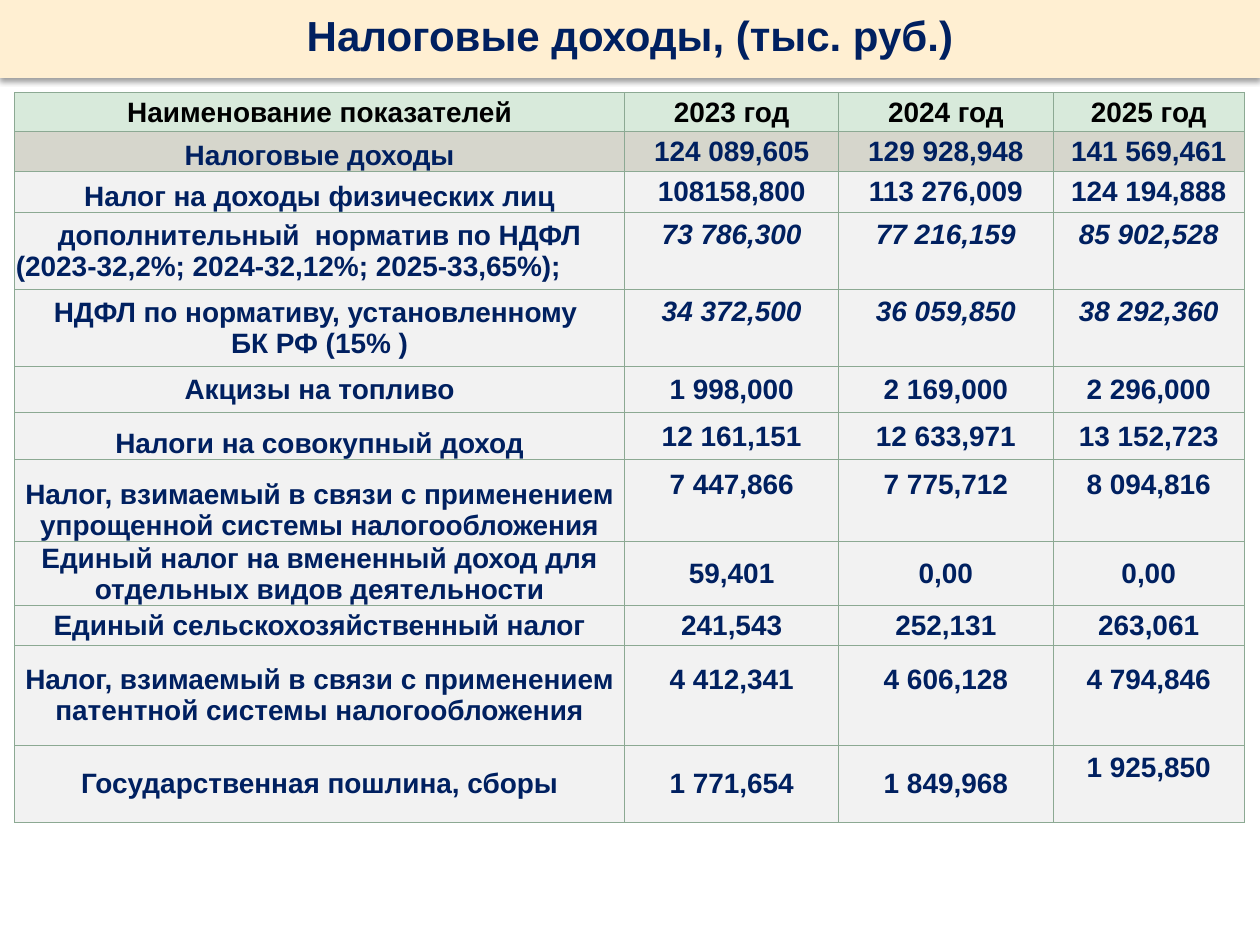
from pptx import Presentation
from pptx.dml.color import RGBColor as RGB
from pptx.enum.shapes import MSO_SHAPE as Shape
from pptx.enum.text import MSO_ANCHOR as Anchor, PP_ALIGN as Align
from pptx.oxml import parse_xml
from pptx.oxml.ns import nsdecls
from pptx.util import Pt

HUES = {"navy": "002060", "black": "000000", "cream": "FFEFD2", "mint": "D8EADB",
        "stone": "D6D6CC", "pale": "F2F2F2", "sage": "8CA993"}

COLS = [348.5, 122.4, 122.4, 109.4]
MID, LOW = Anchor.MIDDLE, Anchor.BOTTOM
LIFT = 18.4

ROWS = [
    (22.3, MID, ["Наименование показателей", "2023 год", "2024 год", "2025 год"]),
    (22.9, LOW, ["Налоговые доходы", "124 089,605", "129 928,948", "141 569,461"]),
    (23.2, LOW, ["Налог на доходы физических лиц", "108158,800", "113 276,009", "124 194,888"]),
    (44, MID, [" дополнительный  норматив по НДФЛ \n(2023-32,2%; 2024-32,12%; 2025-33,65%);",
               "73 786,300", "77 216,159", "85 902,528"]),
    (44, MID, ["НДФЛ по нормативу, установленному \nБК РФ (15% )",
               "34 372,500", "36 059,850", "38 292,360"]),
    (26.7, MID, ["Акцизы на топливо", "1 998,000", "2 169,000", "2 296,000"]),
    (26.7, LOW, ["Налоги на совокупный доход", "12 161,151", "12 633,971", "13 152,723"]),
    (46.8, LOW, ["Налог, взимаемый в связи с применением упрощенной системы налогообложения",
                 "7 447,866", "7 775,712", "8 094,816"]),
    (36.6, LOW, ["Единый налог на вмененный доход для отдельных видов деятельности",
                 "59,401", "0,00", "0,00"]),
    (22.9, MID, ["Единый сельскохозяйственный налог", "241,543", "252,131", "263,061"]),
    (57, MID, ["Налог, взимаемый в связи с применением патентной системы налогообложения",
               "4 412,341", "4 606,128", "4 794,846"]),
    (44, MID, ["Государственная пошлина, сборы", "1 771,654", "1 849,968", "1 925,850"]),
]
SLANTED = {3, 4}
RAISED = {(r, c) for r in (3, 4, 7, 10) for c in (1, 2, 3)} | {(11, 3)}
LEFT = {(3, 0, 1)}


class Deck:
    font = "Arial"

    def __init__(self, wide, high):
        self.prs = Presentation()
        self.prs.slide_width, self.prs.slide_height = Pt(wide), Pt(high)
        self.slide = self.prs.slides.add_slide(self.prs.slide_layouts[6])

    def style(self, para, size, hue, slant=False, align=Align.CENTER):
        para.alignment = align
        font = para.font
        font.name, font.size, font.bold, font.italic = self.font, Pt(size), True, slant
        font.color.rgb = RGB.from_string(HUES[hue])

    def paint(self, item, hue):
        item.fill.solid()
        item.fill.fore_color.rgb = RGB.from_string(HUES[hue])

    def banner(self, text, wide, high):
        box = self.slide.shapes.add_shape(Shape.RECTANGLE, 0, 0, Pt(wide), Pt(high))
        self.paint(box, "cream")
        box.line.fill.background()
        box.shadow.inherit = False
        glow = box._element.spPr.find("{*}effectLst")
        glow.append(parse_xml(
            f'<a:outerShdw {nsdecls("a")} blurRad="{Pt(3.1)}" dist="{Pt(2)}" dir="5400000" '
            f'rotWithShape="0"><a:srgbClr val="{HUES["black"]}"><a:alpha val="38000"/>'
            '</a:srgbClr></a:outerShdw>'))
        frame = box.text_frame
        frame.word_wrap = True
        frame.vertical_anchor = MID
        frame.margin_top, frame.margin_bottom = 0, Pt(5)
        frame.text = text
        self.style(frame.paragraphs[0], 24, "navy")

    def border(self, cell):
        props = cell._tc.get_or_add_tcPr()
        for side in "LRTB":
            props.append(parse_xml(
                f'<a:ln{side} {nsdecls("a")} w="{Pt(0.5)}"><a:solidFill>'
                f'<a:srgbClr val="{HUES["sage"]}"/></a:solidFill></a:ln{side}>'))

    def cell(self, cell, r, c, text, anchor):
        self.border(cell)
        self.paint(cell, {0: "mint", 1: "stone"}.get(r, "pale"))
        cell.margin_left = cell.margin_right = cell.margin_top = Pt(0.7)
        cell.margin_bottom = Pt(LIFT if (r, c) in RAISED else 0)
        cell.vertical_anchor = MID if c else anchor
        cell.text = text
        for n, para in enumerate(cell.text_frame.paragraphs):
            self.style(para, 16, "navy" if r else "black", c > 0 and r in SLANTED,
                       Align.LEFT if (r, c, n) in LEFT else Align.CENTER)

    def table(self, left, top):
        high = sum(row[0] for row in ROWS)
        grid = self.slide.shapes.add_table(
            len(ROWS), len(COLS), Pt(left), Pt(top), Pt(sum(COLS)), Pt(high)).table
        for col, wide in zip(grid.columns, COLS):
            col.width = Pt(wide)
        for r, (tall, anchor, texts) in enumerate(ROWS):
            grid.rows[r].height = Pt(tall)
            for c, text in enumerate(texts):
                self.cell(grid.cell(r, c), r, c, text, anchor)


def main():
    deck = Deck(720, 540)
    deck.table(8.4, 52.8)
    deck.banner("Налоговые доходы, (тыс. руб.)", 720, 44.6)
    deck.prs.save("out.pptx")


if __name__ == "__main__":
    main()
